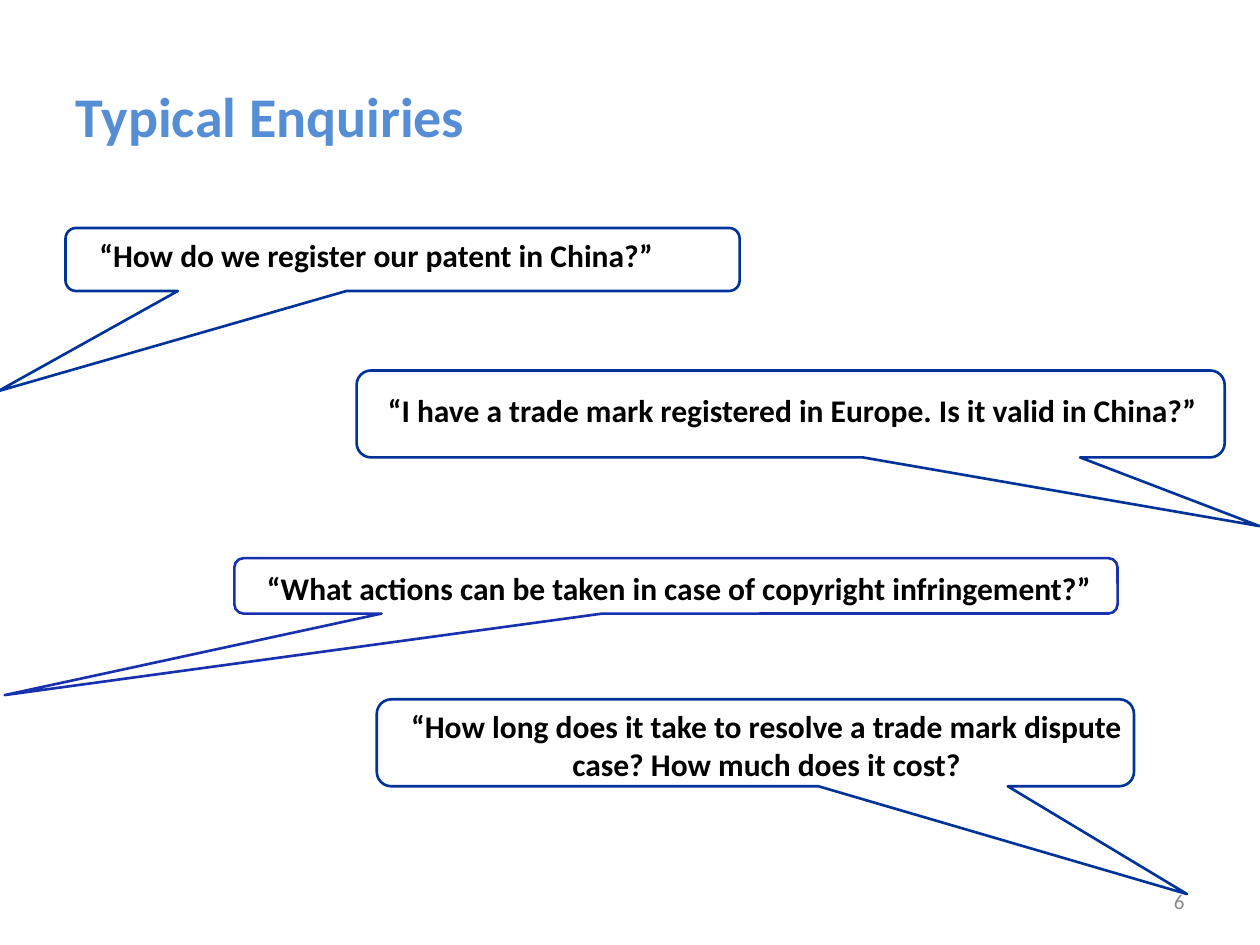
import dataclasses
import pptx
import pptx.util
import pptx.dml.color
import pptx.enum.shapes
import pptx.enum.text

Inches = pptx.util.Inches
Pt = pptx.util.Pt
RGBColor = pptx.dml.color.RGBColor
Align = pptx.enum.text.PP_ALIGN
Anchor = pptx.enum.text.MSO_ANCHOR

FONT = "Calibri"
NAVY = RGBColor(0x00, 0x33, 0x99)
INDIGO = RGBColor(0x18, 0x31, 0xAE)
SKY = RGBColor(0x55, 0x8E, 0xD5)
GRAY = RGBColor(0x89, 0x89, 0x89)
BLACK = RGBColor(0, 0, 0)
WHITE = RGBColor(255, 255, 255)


@dataclasses.dataclass
class Box:
    left: float
    top: float
    width: float
    height: float

    def lengths(self) -> list:
        return [Inches(v) for v in dataclasses.astuple(self)]


@dataclasses.dataclass
class Bubble:
    words: str
    frame: Box
    tail: tuple
    label: Box
    color: RGBColor = NAVY
    align: Align = Align.LEFT


BUBBLES = [
    Bubble("“How long does it take to resolve a trade mark dispute case? "
           "How much does it cost?",
           Box(2.99, 5.55, 6.01, 0.69), (0.57, 1.74),
           Box(3.05, 5.55, 6.07, 0.72), align=Align.CENTER),
    Bubble("“I have a trade mark registered in Europe. Is it valid in China?”",
           Box(2.83, 2.94, 6.89, 0.69), (0.54, 1.29),
           Box(2.98, 3.05, 7.0, 0.4)),
    Bubble("“What actions can be taken in case of copyright infringement?”",
           Box(1.86, 4.43, 7.01, 0.44), (-0.76, 1.97),
           Box(2.02, 4.45, 7.2, 0.44), color=INDIGO),
    Bubble("“How do we register our patent in China?”",
           Box(0.52, 1.81, 5.35, 0.5), (-0.6, 2.09),
           Box(0.69, 1.82, 5.1, 0.4)),
]


def write(shape, words: str, size: int, color: RGBColor,
          align: Align, bold: bool = True) -> None:
    frame = shape.text_frame
    frame.word_wrap = True
    frame.vertical_anchor = Anchor.MIDDLE
    para = frame.paragraphs[0]
    para.alignment = align
    run = para.add_run()
    run.text = words
    run.font.name = FONT
    run.font.size = Pt(size)
    run.font.bold = bold
    run.font.color.rgb = color


def draw(slide, item: Bubble) -> None:
    kind = pptx.enum.shapes.MSO_SHAPE.ROUNDED_RECTANGULAR_CALLOUT
    shape = slide.shapes.add_shape(kind, *item.frame.lengths())
    shape.shadow.inherit = False
    shape.adjustments[0], shape.adjustments[1] = item.tail
    shape.fill.solid()
    shape.fill.fore_color.rgb = WHITE
    shape.line.color.rgb = item.color
    shape.line.width = Pt(1.5)
    label = slide.shapes.add_textbox(*item.label.lengths())
    write(label, item.words, 18, BLACK, item.align)


def main() -> None:
    deck = pptx.Presentation()
    deck.slide_width = Inches(10)
    deck.slide_height = Inches(7.5)
    slide = deck.slides.add_slide(deck.slide_layouts[5])
    title = slide.shapes.title
    title.left, title.top, title.width, title.height = Box(
        0.5, 0.29, 9, 1.25).lengths()
    write(title, "Typical Enquiries", 32, SKY, Align.LEFT)
    for item in BUBBLES:
        draw(slide, item)
    number = slide.shapes.add_textbox(*Box(7.17, 6.95, 2.33, 0.4).lengths())
    write(number, "6", 12, GRAY, Align.RIGHT, bold=False)
    deck.save("out.pptx")


if __name__ == "__main__":
    main()
